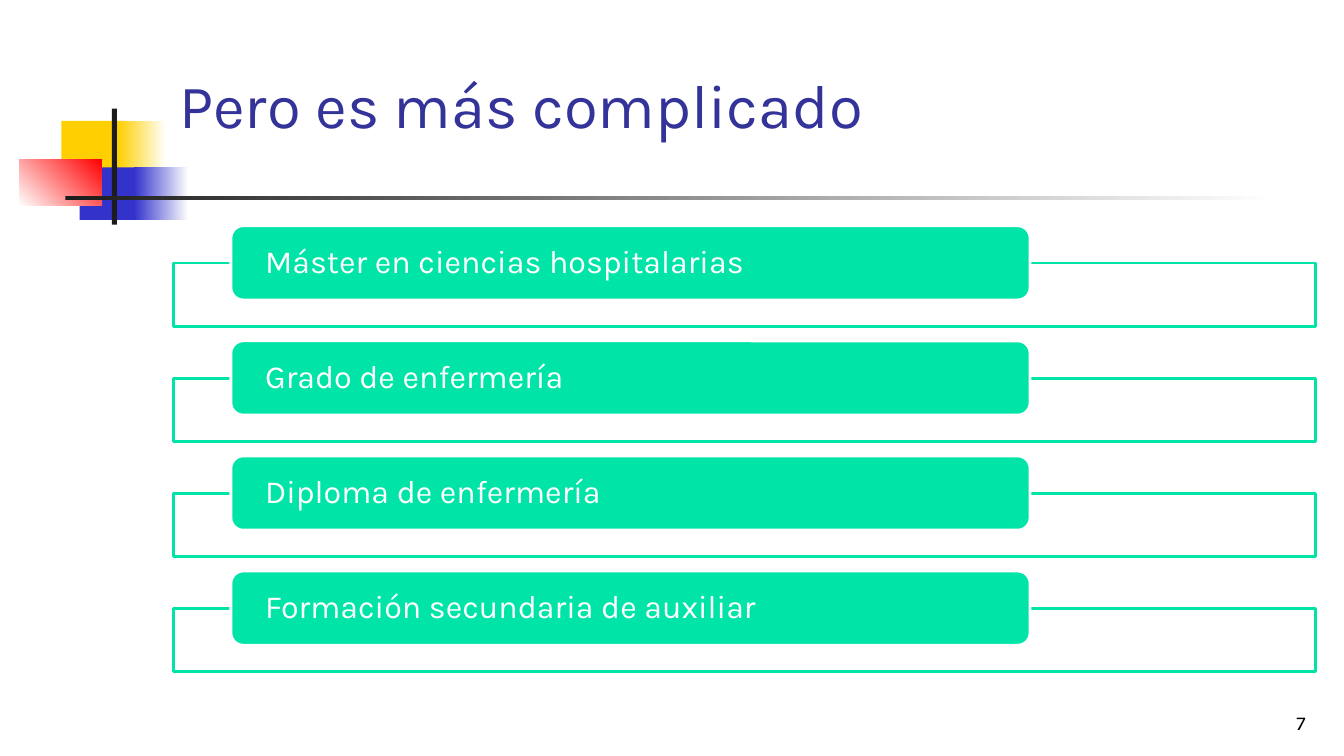
from lxml import etree
from pptx import Presentation
from pptx.dml.color import RGBColor
from pptx.enum.shapes import MSO_SHAPE
from pptx.enum.text import MSO_ANCHOR, PP_ALIGN
from pptx.oxml.ns import qn
from pptx.util import Cm, Pt

RECTANGLE = MSO_SHAPE.RECTANGLE
ROUNDED = MSO_SHAPE.ROUNDED_RECTANGLE
LEFT, RIGHT = PP_ALIGN.LEFT, PP_ALIGN.RIGHT
MIDDLE, BOTTOM = MSO_ANCHOR.MIDDLE, MSO_ANCHOR.BOTTOM

FONT = "Karla"
GREEN, WHITE, BLACK = "00E4A8", "FFFFFF", "000000"
YELLOW, BLUE, RED, DARK = "FFCF01", "3333CC", "FF0000", "1C1C1C"
TITLE_COLOR = "333399"

# Position in cm, then start colour, end colour and angle (None: solid)
DECORATION = [
    ((1.55, 3.05, 1.63, 1.32), YELLOW, None, 0),
    ((2.97, 3.05, 1.22, 1.32), YELLOW, WHITE, 0),
    ((2.01, 4.22, 1.57, 1.32), BLUE, None, 0),
    ((3.38, 4.22, 1.37, 1.32), BLUE, WHITE, 0),
    ((0.48, 4.01, 2.08, 1.17), WHITE, RED, 45),
    ((2.82, 2.74, 0.13, 2.92), DARK, None, 0),
    ((1.65, 4.95, 30.48, 0.09), DARK, WHITE, 0),
]

LEVELS = [
    "Máster en ciencias hospitalarias",
    "Grado de enfermería",
    "Diploma de enfermería",
    "Formación secundaria de auxiliar",
]
FIRST_TOP, LEVEL_PITCH = 5.69, 2.9
FRAME_OFFSET = 0.94


def rgb(color):
    return RGBColor.from_string(color)


def set_format(target, values):
    for name, value in values.items():
        setattr(target, name, value)


def add_box(slide, kind, position, color, line_color=None):
    shape = slide.shapes.add_shape(kind, *map(Cm, position))
    shape.shadow.inherit = False
    shape.fill.solid()
    shape.fill.fore_color.rgb = rgb(color)
    if line_color:
        shape.line.color.rgb = rgb(line_color)
        shape.line.width = Pt(2)
    else:
        shape.line.fill.background()
    return shape


def set_gradient(shape, start, end, angle):
    """Fade between two colours; the angle runs counter-clockwise."""
    shape.fill.gradient()
    shape.fill.gradient_angle = angle
    for stop, color in zip(shape.fill.gradient_stops, (start, end)):
        stop.color.rgb = rgb(color)


def set_opacity(shape, percent):
    color = shape.fill._xPr.find(qn("a:solidFill"))[0]
    etree.SubElement(color, qn("a:alpha")).set("val", str(percent * 1000))


def write_text(shape, text, size, color, align=LEFT, anchor=MIDDLE,
               side_margin=0.25, line_spacing=1.0):
    frame = shape.text_frame
    set_format(frame, {
        "word_wrap": True,
        "vertical_anchor": anchor,
        "margin_left": Cm(side_margin),
        "margin_right": Cm(side_margin),
    })
    paragraph = frame.paragraphs[0]
    set_format(paragraph, {"alignment": align, "line_spacing": line_spacing})
    run = paragraph.add_run()
    run.text = text
    set_format(run.font, {"name": FONT, "size": Pt(size)})
    run.font.color.rgb = rgb(color)


def add_label(slide, position, *text_arguments, **text_format):
    box = slide.shapes.add_textbox(*map(Cm, position))
    write_text(box, *text_arguments, **text_format)


def add_decoration(slide):
    for position, start, end, angle in DECORATION:
        shape = add_box(slide, RECTANGLE, position, start)
        if end:
            set_gradient(shape, start, end, angle)


def add_level(slide, text, top):
    """Draw an outlined frame with a rounded heading over its upper edge."""
    frame = add_box(slide, RECTANGLE, (4.37, top + FRAME_OFFSET, 28.78, 1.6),
                    WHITE, GREEN)
    set_opacity(frame, 90)
    heading = add_box(slide, ROUNDED, (5.82, top, 20.14, 1.87), GREEN, WHITE)
    write_text(heading, text, 23, WHITE, side_margin=0.77, line_spacing=0.9)


def main():
    presentation = Presentation()
    set_format(presentation, {"slide_width": Cm(33.87),
                              "slide_height": Cm(19.05)})
    slide = presentation.slides.add_slide(presentation.slide_layouts[6])
    add_decoration(slide)
    add_label(slide, (4.27, 0.58, 28.85, 4.06),
              "Pero es más complicado", 44, TITLE_COLOR)
    for index, text in enumerate(LEVELS):
        add_level(slide, text, FIRST_TOP + index * LEVEL_PITCH)
    add_label(slide, (26.09, 17.35, 7.06, 1.27), "7", 14, BLACK,
              align=RIGHT, anchor=BOTTOM)
    presentation.save("out.pptx")


if __name__ == "__main__":
    main()
